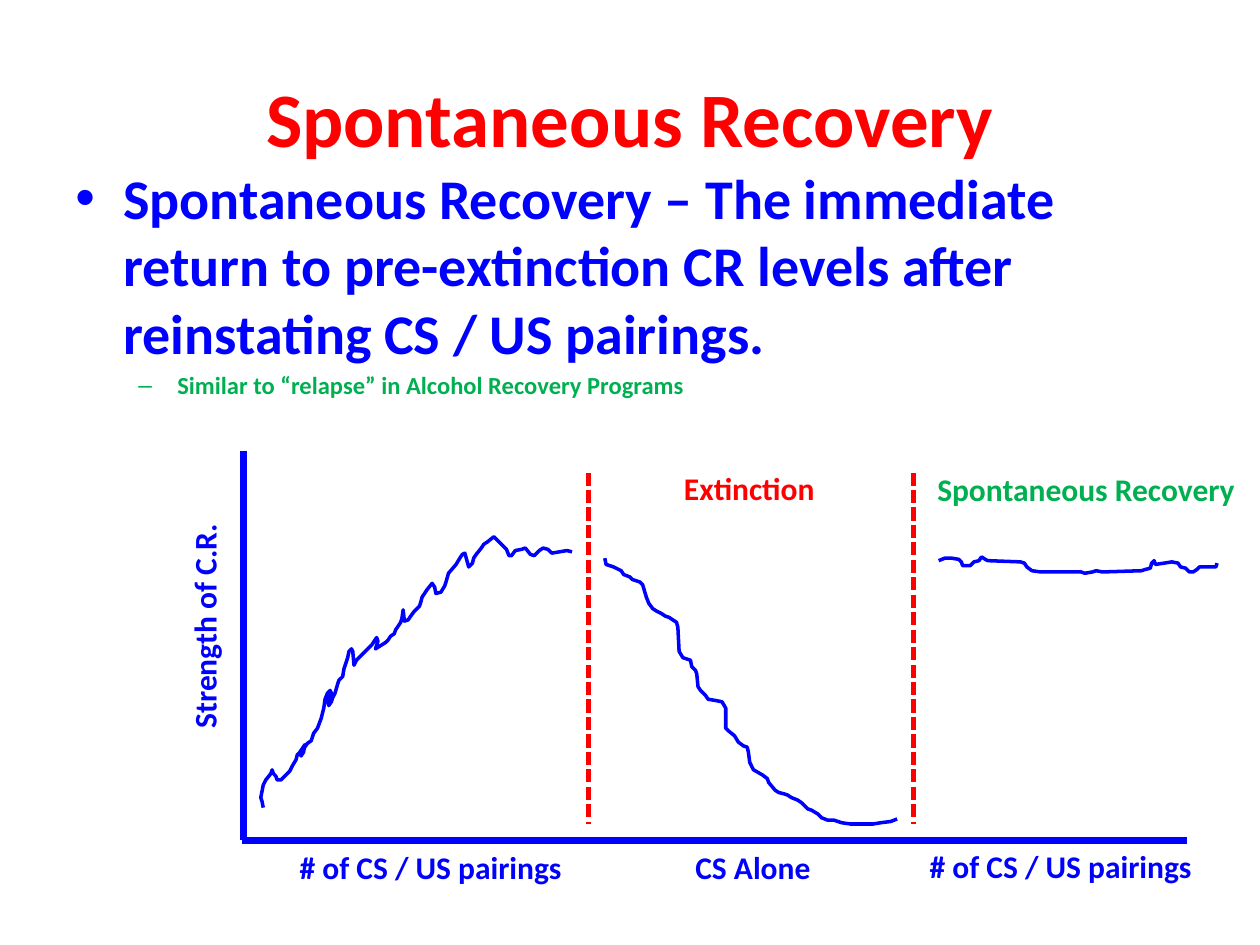
from lxml.etree import SubElement
from pptx import Presentation
from pptx.dml.color import RGBColor
from pptx.enum.dml import MSO_LINE
from pptx.enum.shapes import MSO_CONNECTOR
from pptx.enum.text import MSO_ANCHOR, PP_ALIGN
from pptx.oxml.ns import qn
from pptx.util import Inches, Pt

BLUE, RED, GREEN = "0000FF", "FF0000", "00B050"


def color(hex_value):
    return RGBColor.from_string(hex_value)


def write(para, text, size=18, fill=BLUE, align=PP_ALIGN.LEFT, bullet=None, margin=0, hang=0):
    """Fill a paragraph with one bold span; bullet, margin and hang make it a list item."""
    para.alignment = align
    span = para.add_run()
    span.text = text
    span.font.name = "Calibri"
    span.font.size = Pt(size)
    span.font.bold = True
    span.font.color.rgb = color(fill)
    if bullet:
        properties = para._p.get_or_add_pPr()
        properties.set("marL", str(Inches(margin)))
        properties.set("indent", str(-Inches(hang)))
        SubElement(properties, qn("a:buFont")).set("typeface", "Arial")
        SubElement(properties, qn("a:buChar")).set("char", bullet)


deck = Presentation()
deck.slide_width, deck.slide_height = Inches(10), Inches(7.5)
page = deck.slides.add_slide(deck.slide_layouts[5])
shapes = page.shapes

# The drawing grid: 1000 columns by 750 rows
column = deck.slide_width // 1000
row = deck.slide_height // 750

# Title
title = shapes.title
title.left, title.top = 50 * column, 30 * row
title.width, title.height = 900 * column, 125 * row
title.text_frame.vertical_anchor = MSO_ANCHOR.MIDDLE
write(title.text_frame.paragraphs[0], "Spontaneous Recovery", size=44, fill=RED,
      align=PP_ALIGN.CENTER)

# Definition
body = shapes.add_textbox(50 * column, 125 * row, 900 * column, 495 * row).text_frame
body.word_wrap = True
write(body.paragraphs[0],
      "Spontaneous Recovery – The immediate return to pre-extinction CR levels "
      "after reinstating CS / US pairings.",
      size=32, bullet="•", margin=0.38, hang=0.38)
example = body.add_paragraph()
example.level = 1
example.space_before = Pt(2.8)
write(example, "Similar to “relapse” in Alcohol Recovery Programs",
      size=14, fill=GREEN, bullet="–", margin=0.81, hang=0.31)

# Diagram labels: text, left, top, width, colour, rotation
labels = [
    ("# of CS / US pairings", 228, 668, 230, BLUE, 0),
    ("CS Alone", 542, 668, 112, BLUE, 0),
    ("# of CS / US pairings", 728, 667, 230, BLUE, 0),
    ("Strength of C.R.", 70, 476, 184, BLUE, 270),
    ("Spontaneous Recovery", 734, 368, 258, GREEN, 0),
    ("Extinction", 533, 367, 125, RED, 0),
]
for text, left, top, width, fill, rotation in labels:
    box = shapes.add_textbox(left * column, top * row, width * column, 40 * row)
    box.rotation = rotation
    box.text_frame.word_wrap = False
    write(box.text_frame.paragraphs[0], text, fill=fill)

# Axes and phase dividers: start, end, colour, weight, dash
lines = [
    ((193, 358), (193, 667), BLUE, 4, None),
    ((942, 667), (192, 667), BLUE, 4, None),
    ((467, 375), (467, 654), RED, 2.5, MSO_LINE.SQUARE_DOT),
    ((725, 375), (725, 654), RED, 2.5, MSO_LINE.SQUARE_DOT),
]
for (x1, y1), (x2, y2), stroke, weight, dash in lines:
    line = shapes.add_connector(MSO_CONNECTOR.STRAIGHT,
                                x1 * column, y1 * row, x2 * column, y2 * row)
    line.line.color.rgb = color(stroke)
    line.line.width = Pt(weight)
    line.line.dash_style = dash
    SubElement(line._element.spPr, qn("a:effectLst"))

# Response curves, one per phase, as grid points
acquisition = [
    (209, 641), (208, 636), (207, 633), (209, 623), (211, 619), (215, 614), (216, 611),
    (217, 614), (219, 616), (220, 619), (223, 619), (225, 617), (230, 612), (232, 608),
    (235, 603), (236, 599), (238, 597), (242, 591), (241, 597), (239, 600), (238, 597),
    (242, 593), (244, 590), (247, 588), (249, 582), (252, 578), (255, 570), (257, 562),
    (258, 555), (260, 550), (262, 548), (263, 550), (260, 556), (261, 560), (263, 557),
    (264, 554), (266, 550), (268, 543), (269, 540), (272, 537), (273, 531), (276, 522),
    (277, 517), (279, 515), (280, 517), (281, 528), (283, 524), (288, 519), (290, 517),
    (295, 512), (299, 506), (300, 509), (298, 515), (306, 510), (308, 508), (310, 505),
    (313, 503), (314, 500), (318, 494), (319, 491), (320, 484), (321, 493), (324, 492),
    (326, 489), (329, 485), (331, 483), (333, 481), (334, 478), (335, 474), (337, 471),
    (339, 468), (343, 463), (345, 466), (346, 471), (350, 470), (353, 465), (354, 462),
    (356, 455), (362, 448), (365, 443), (367, 440), (369, 439), (372, 450), (375, 447),
    (376, 443), (378, 440), (382, 435), (384, 432), (387, 430), (392, 426), (397, 431),
    (402, 436), (404, 441), (406, 441), (409, 437), (414, 436), (417, 435), (421, 440),
    (424, 441), (428, 437), (431, 435), (435, 436), (438, 439), (450, 437), (454, 438),
]
extinction = [
    (480, 443), (481, 448), (484, 449), (487, 450), (493, 453), (495, 456), (500, 458),
    (502, 460), (508, 462), (510, 464), (513, 474), (515, 479), (518, 483), (521, 485),
    (525, 487), (528, 489), (531, 490), (537, 494), (538, 498), (539, 517), (542, 522),
    (548, 524), (549, 529), (552, 532), (553, 535), (554, 545), (556, 548), (560, 552),
    (562, 555), (568, 556), (573, 557), (576, 562), (576, 578), (578, 580), (583, 584),
    (586, 589), (590, 592), (593, 593), (594, 597), (595, 605), (597, 609), (598, 611),
    (605, 615), (609, 618), (610, 621), (615, 627), (618, 629), (622, 630), (625, 631),
    (628, 633), (633, 635), (636, 637), (641, 642), (644, 643), (649, 646), (652, 649),
    (657, 651), (662, 651), (668, 653), (675, 654), (693, 654), (699, 653), (707, 652),
    (712, 650),
]
recovery = [
    (745, 445), (750, 443), (755, 443), (761, 444), (763, 446), (764, 449), (770, 449),
    (773, 446), (777, 445), (779, 442), (782, 444), (784, 445), (810, 446), (813, 447),
    (815, 450), (819, 453), (826, 454), (858, 454), (861, 455), (867, 454), (870, 453),
    (875, 454), (906, 453), (909, 452), (913, 451), (914, 447), (916, 445), (917, 448),
    (924, 447), (930, 446), (935, 447), (937, 450), (941, 451), (944, 454), (947, 454),
    (950, 452), (952, 450), (965, 450), (966, 447),
]
for points in (acquisition, extinction, recovery):
    builder = shapes.build_freeform(*points[0], scale=(column, row))
    builder.add_line_segments(points[1:], close=False)
    curve = builder.convert_to_shape()
    curve.fill.background()
    curve.line.color.rgb = color(BLUE)
    curve.line.width = Pt(2)
    curve.shadow.inherit = False

deck.save("out.pptx")
